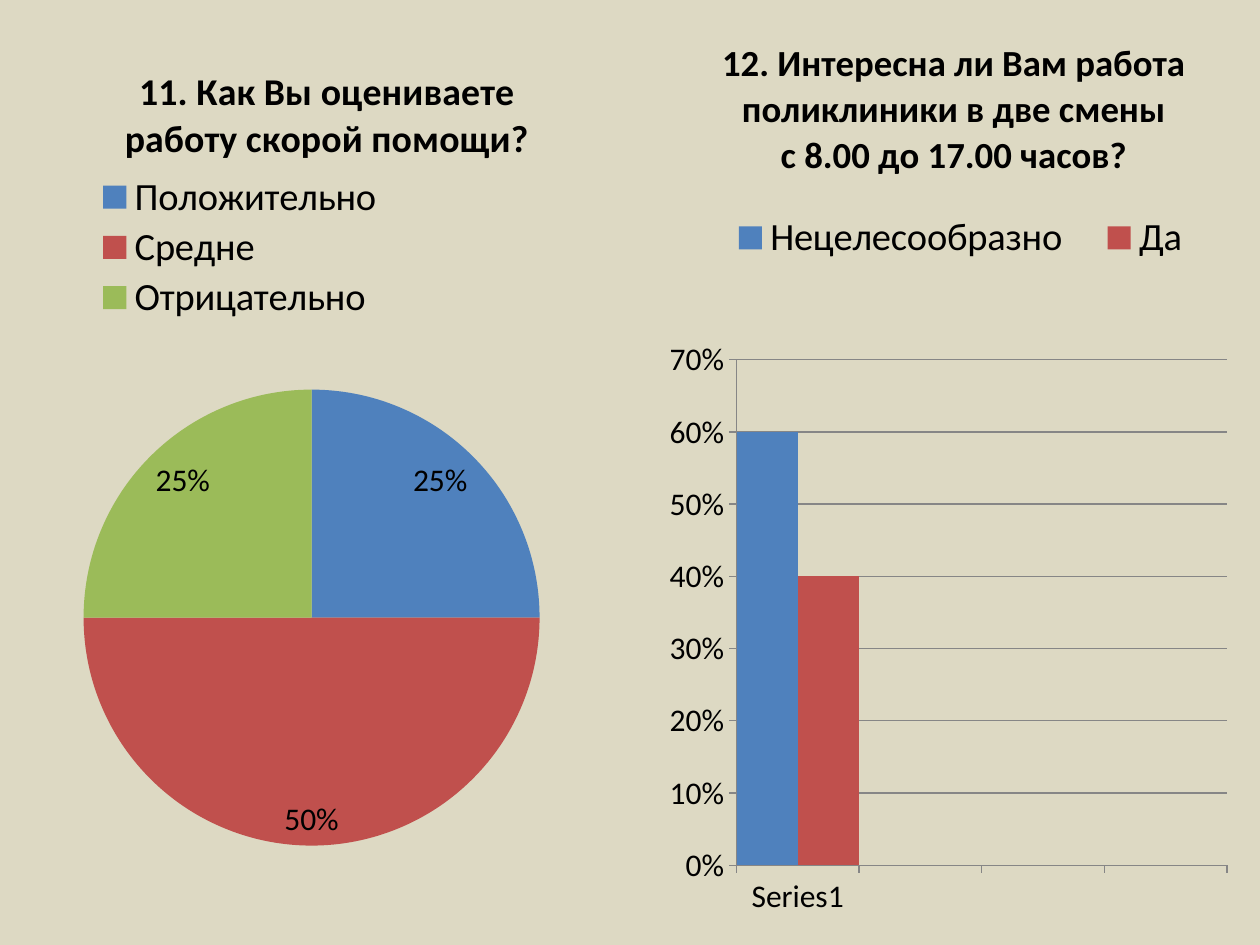
from dataclasses import dataclass

from lxml import etree
from pptx import Presentation
from pptx.chart.data import CategoryChartData as Data
from pptx.dml.color import RGBColor as RGB
from pptx.enum.chart import XL_CHART_TYPE as Kind
from pptx.enum.chart import XL_LABEL_POSITION as Spot
from pptx.enum.chart import XL_LEGEND_POSITION as Side
from pptx.enum.chart import XL_TICK_MARK as Tick
from pptx.oxml.ns import qn
from pptx.util import Pt


@dataclass(frozen=True)
class Theme:
    back: RGB = RGB.from_string("DDD9C3")
    ink: RGB = RGB.from_string("000000")
    rule: RGB = RGB.from_string("868686")
    blue: RGB = RGB.from_string("4F81BD")
    red: RGB = RGB.from_string("C0504D")
    green: RGB = RGB.from_string("9BBB59")
    face: str = "Calibri"
    body: int = 18
    key: int = 22


THEME = Theme()


def style(item, **vals):
    for name, val in vals.items():
        setattr(item, name, val)


def paint(fmt, color):
    fmt.fill.solid()
    fmt.fill.fore_color.rgb = color


def rule(line):
    line.color.rgb = THEME.rule
    line.width = Pt(0.75)


def place(node, index, inner=False, **spots):
    """Give a chart part a fixed place, in fractions of the chart."""
    for old in node.findall(qn("c:layout")):
        node.remove(old)
    layout = etree.Element(qn("c:layout"))
    manual = etree.SubElement(layout, qn("c:manualLayout"))
    vals = {"layoutTarget": "inner"} if inner else {}
    vals |= {"xMode": "edge", "yMode": "edge"} | spots
    for tag, val in vals.items():
        etree.SubElement(manual, qn("c:" + tag)).set("val", str(val))
    node.insert(index, layout)


def add_chart(slide, box, kind, data, lines, size, spots):
    """Add a chart with its title, legend and plot in place."""
    area = [Pt(n) for n in box]
    chart = slide.shapes.add_chart(kind, *area, data).chart
    style(chart.font, size=Pt(THEME.body), name=THEME.face)
    chart.font.color.rgb = THEME.ink

    # Title
    chart.has_title = True
    frame = chart.chart_title.text_frame
    frame.text = "\n".join(lines)
    for para in frame.paragraphs:
        for run in para.runs:
            style(run.font, size=Pt(size), bold=True, name=THEME.face)
            run.font.color.rgb = THEME.ink
    chart.chart_title.include_in_layout = False

    # Legend
    chart.has_legend = True
    style(chart.legend, position=Side.RIGHT, include_in_layout=False)
    style(chart.legend.font, size=Pt(THEME.key), name=THEME.face)
    chart.legend.font.color.rgb = THEME.ink

    # Places of the parts
    root = chart.element.find(qn("c:chart"))
    for tag, index in (("title", 1), ("legend", 1), ("plotArea", 0)):
        node = root.find(qn("c:" + tag))
        place(node, index, tag == "plotArea", **spots[tag])
    return chart


def add_pie(slide, box):
    data = Data(number_format="0%")
    data.categories = ["Положительно", "Средне", "Отрицательно"]
    data.add_series("11. Как Вы оцениваете работу скорой помощи?",
                    (0.25, 0.5, 0.25))
    spots = {
        "title": dict(x=0.17, y=0.04),
        "legend": dict(x=0.09, y=0.16, w=0.54, h=0.17),
        "plotArea": dict(x=0.11, y=0.34, w=0.73, h=0.63),
    }
    lines = ["11. Как Вы оцениваете", "работу скорой помощи?"]
    chart = add_chart(slide, box, Kind.PIE, data, lines, 21.6, spots)

    # Slices and their labels
    plot = chart.plots[0]
    plot.vary_by_categories = True
    for i, color in enumerate((THEME.blue, THEME.red, THEME.green)):
        paint(plot.series[0].points[i].format, color)
    plot.has_data_labels = True
    style(plot.data_labels, show_value=True, show_percentage=False,
          number_format="0%", number_format_is_linked=False,
          position=Spot.INSIDE_END)


def add_bars(slide, box):
    data = Data(number_format="0%")
    data.categories = ["Series1", "", "", ""]
    for name, val in (("Нецелесообразно", 0.6), ("Да", 0.4)):
        data.add_series(name, (val, None, None, None))
    spots = {
        "title": dict(x=0.13, y=0.02),
        "legend": dict(x=0.11, y=0.2, w=0.84, h=0.09),
        "plotArea": dict(x=0.16, y=0.38, w=0.81, h=0.56),
    }
    lines = ["12. Интересна ли Вам работа", "поликлиники в две смены",
             "с 8.00 до 17.00 часов?"]
    chart = add_chart(slide, box, Kind.COLUMN_CLUSTERED, data, lines, 21,
                      spots)

    # Bars
    plot = chart.plots[0]
    style(plot, gap_width=0, overlap=0, vary_by_categories=False)
    for bar, color in zip(plot.series, (THEME.blue, THEME.red)):
        paint(bar.format, color)

    # Axes
    axis = chart.value_axis
    style(axis, minimum_scale=0, maximum_scale=0.7, major_unit=0.1,
          has_major_gridlines=True)
    style(axis.tick_labels, number_format="0%",
          number_format_is_linked=False)
    rule(axis.major_gridlines.format.line)
    for each in (axis, chart.category_axis):
        each.major_tick_mark = Tick.OUTSIDE
        rule(each.format.line)


def main():
    deck = Presentation()
    style(deck, slide_width=Pt(720), slide_height=Pt(540))
    slide = deck.slides.add_slide(deck.slide_layouts[6])
    paint(slide.background, THEME.back)
    add_pie(slide, (8.5, 15, 357, 516))
    add_bars(slide, (365.5, 9.5, 346, 516))
    deck.save("out.pptx")


if __name__ == "__main__":
    main()
